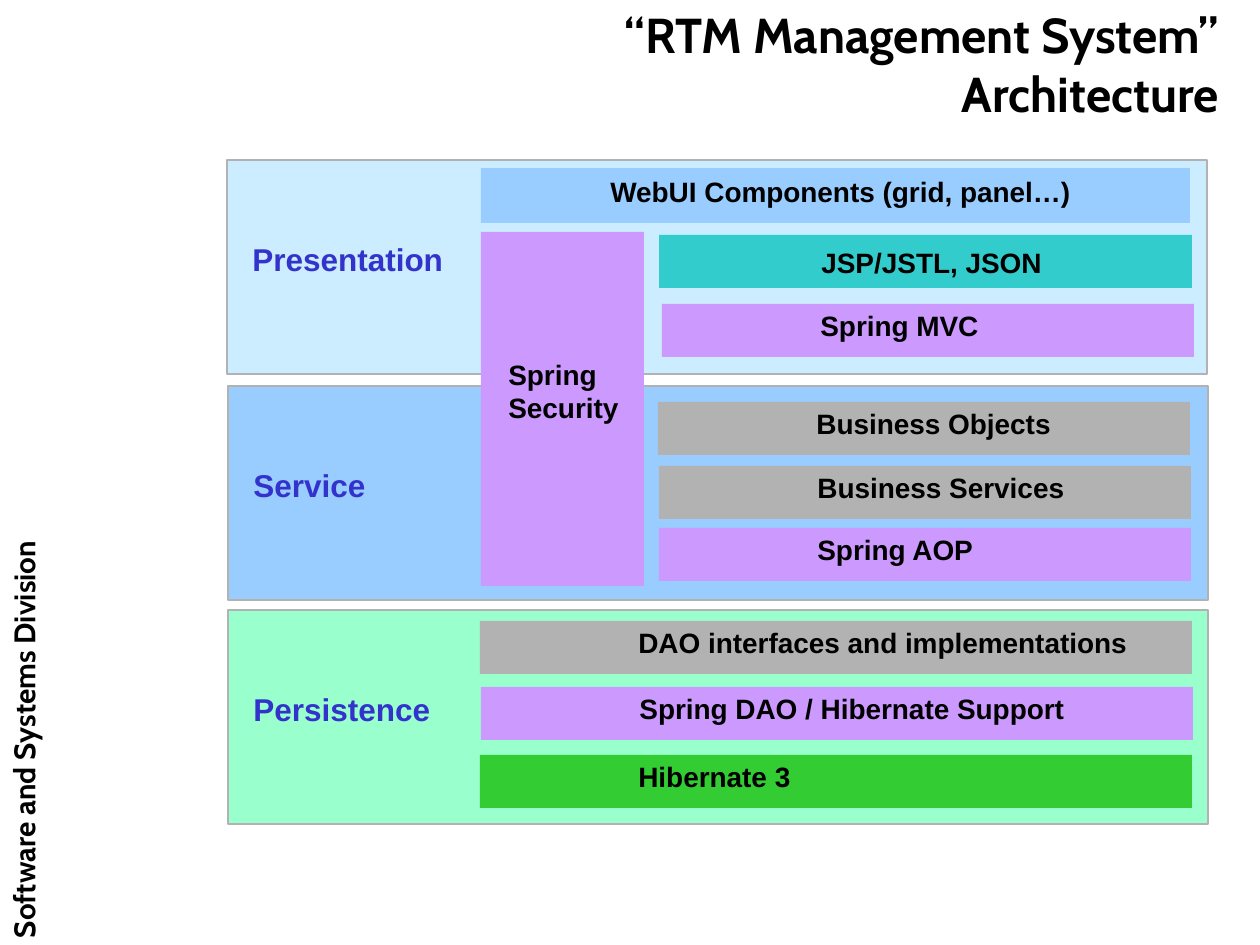
from pptx import Presentation, util as u
from pptx.dml.color import RGBColor
from pptx.enum import shapes, text

PX = u.Inches(1) / 126  # one scale: 126 px to the inch

BLACK = RGBColor(0x00, 0x00, 0x00)
INDIGO = RGBColor(0x33, 0x33, 0xCC)
GREY = RGBColor(0xB2, 0xB2, 0xB2)
PALE_BLUE = RGBColor(0xCC, 0xEC, 0xFF)
BLUE = RGBColor(0x99, 0xCC, 0xFF)
MINT = RGBColor(0x99, 0xFF, 0xCC)
PURPLE = RGBColor(0xCC, 0x99, 0xFF)
TEAL = RGBColor(0x33, 0xCC, 0xCC)
GREEN = RGBColor(0x33, 0xCC, 0x33)

TITLE = ["“RTM Management System”", "Architecture"]
DIVISION = "Software and Systems Division"

# name, fill, left, top
LAYERS = [
    ("Presentation", PALE_BLUE, 227, 160),
    ("Service", BLUE, 228, 386),
    ("Persistence", MINT, 228, 610),
]
LAYER_SIZE = (980, 214)

# name, fill, bar box, label offset from the bar, label size
BAR_H = 53
LABEL_H = 47
INSET = (146, -2)
COMPONENTS = [
    ("WebUI Components (grid, panel…)", BLUE, (481, 168, 709, 55), (117, 0), (528, LABEL_H)),
    ("Spring MVC", PURPLE, (662, 304, 532, BAR_H), INSET, (386, LABEL_H)),
    ("Spring Security", PURPLE, (481, 232, 163, 354), (15, 119), (141, 81)),
    ("JSP/JSTL, JSON", TEAL, (659, 235, 533, BAR_H), (150, 4), (386, LABEL_H)),
    ("Spring AOP", PURPLE, (659, 528, 532, BAR_H), INSET, (386, LABEL_H)),
    ("Business Objects", GREY, (658, 402, 532, BAR_H), INSET, (386, LABEL_H)),
    ("Business Services", GREY, (659, 466, 532, BAR_H), INSET, (386, LABEL_H)),
    ("DAO interfaces and implementations", GREY, (480, 621, 712, BAR_H), INSET, (539, LABEL_H)),
    ("Spring DAO / Hibernate Support", PURPLE, (481, 687, 712, BAR_H), INSET, (470, LABEL_H)),
    ("Hibernate 3", GREEN, (480, 755, 712, BAR_H), INSET, (470, LABEL_H)),
]


def emu(box):
    return [round(length * PX) for length in box]


def add_block(slide, box, fill, outline=None):
    block = slide.shapes.add_shape(shapes.MSO_SHAPE.RECTANGLE, *emu(box))
    block.shadow.inherit = False
    block.fill.solid()
    block.fill.fore_color.rgb = fill
    if outline is None:
        block.line.fill.background()
    else:
        block.line.color.rgb = outline
        block.line.width = u.Pt(0.75)


def add_label(slide, box, lines, size, color=BLACK, font="Arial",
              align=text.PP_ALIGN.LEFT, anchor=text.MSO_ANCHOR.TOP):
    label = slide.shapes.add_textbox(*emu(box))
    frame = label.text_frame
    frame.word_wrap = True
    frame.vertical_anchor = anchor
    paragraph = frame.paragraphs[0]
    paragraph.alignment = align
    for i, line in enumerate(lines):
        if i:
            paragraph.add_line_break()
        run = paragraph.add_run()
        run.text = line
        run.font.name = font
        run.font.size = u.Pt(size)
        run.font.bold = True
        run.font.color.rgb = color
    return label


def main():
    prs = Presentation()
    prs.slide_width, prs.slide_height = emu((1260, 945))
    slide = prs.slides.add_slide(prs.slide_layouts[6])

    # Division name up the left edge, and the title
    division = add_label(slide, (-413, 490, 873, 48), [DIVISION], 17, font="Cabin")
    division.rotation = 270
    add_label(slide, (234, 17, 997, 92), TITLE, 28, font="Cabin",
              align=text.PP_ALIGN.RIGHT, anchor=text.MSO_ANCHOR.MIDDLE)

    # Layers
    for name, fill, left, top in LAYERS:
        add_block(slide, (left, top, *LAYER_SIZE), fill, GREY)
        add_label(slide, (left + 13, top + 74, 224, 50), [name], 18, INDIGO)

    # Components within and across the layers
    for name, fill, bar, (dx, dy), size in COMPONENTS:
        add_block(slide, bar, fill)
        add_label(slide, (bar[0] + dx, bar[1] + dy, *size), [name], 16)

    prs.save("out.pptx")


if __name__ == "__main__":
    main()
